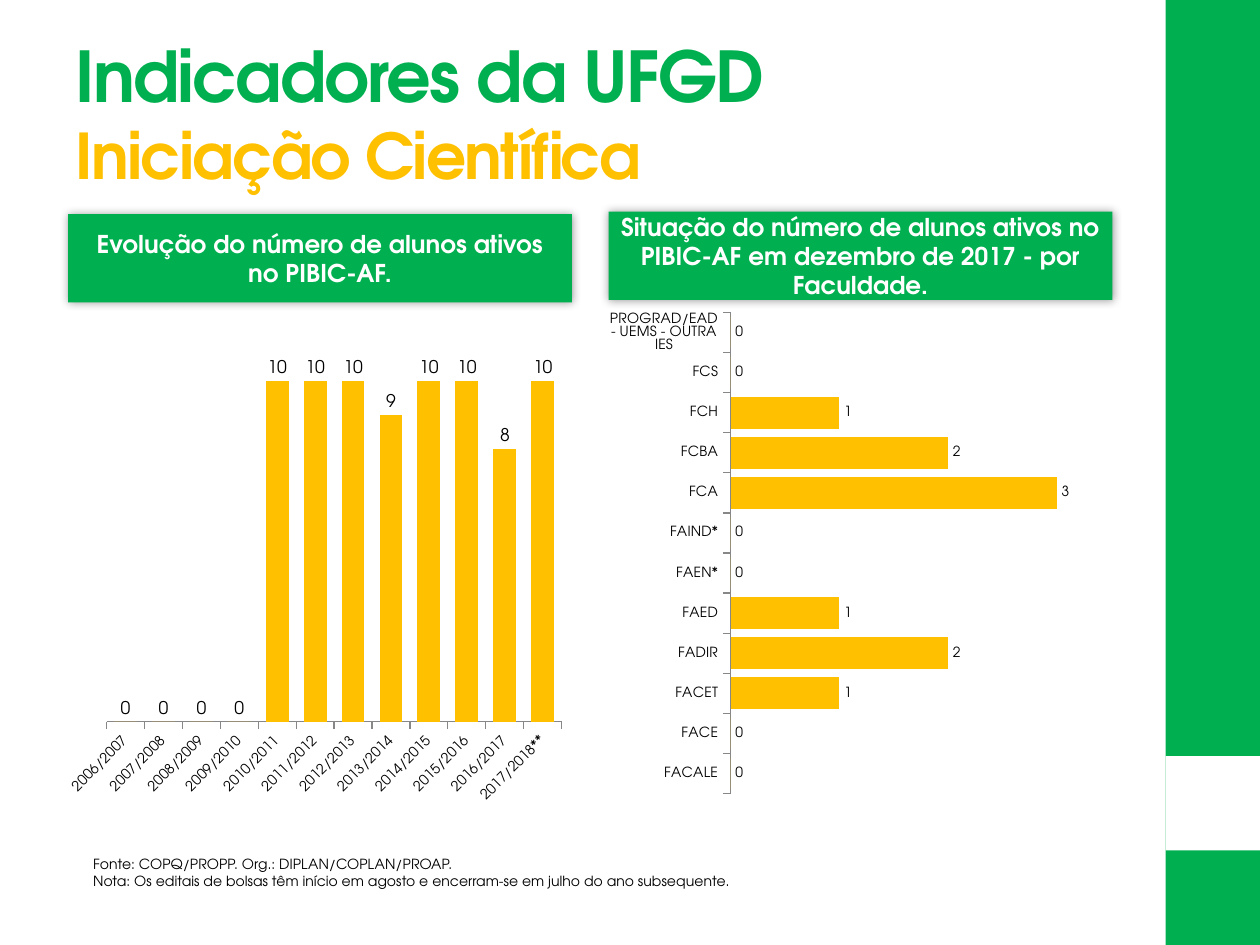
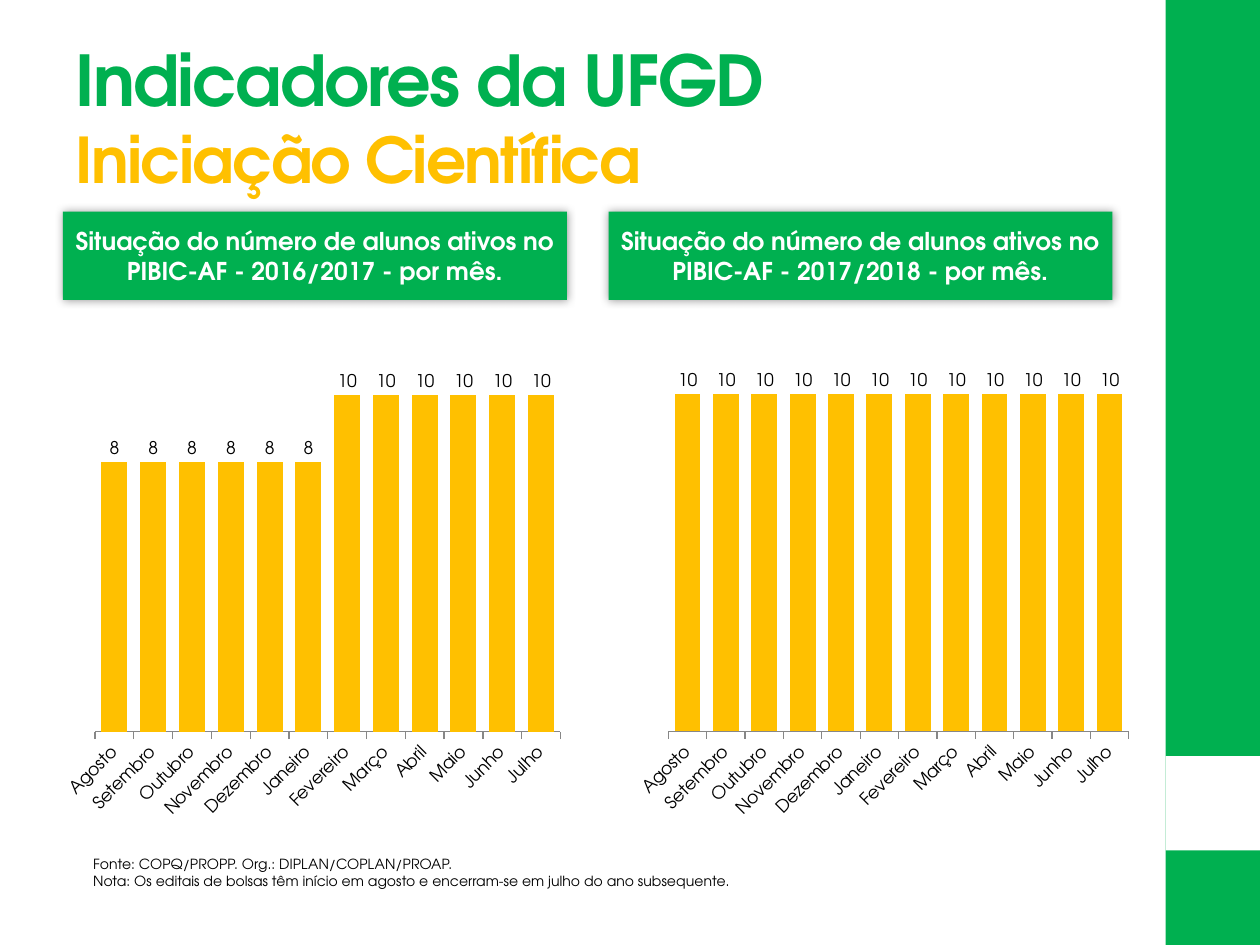
"""Build two slides of scientific initiation indicators."""
import dataclasses

import pptx
import pptx.chart.data
import pptx.dml.color
import pptx.enum.chart
import pptx.enum.shapes
import pptx.enum.text
import pptx.oxml
import pptx.oxml.ns
import pptx.util

GREEN = pptx.dml.color.RGBColor(0x00, 0xB0, 0x50)
AMBER = pptx.dml.color.RGBColor(0xFF, 0xC0, 0x00)
WHITE = pptx.dml.color.RGBColor(0xFF, 0xFF, 0xFF)
BLACK = pptx.dml.color.RGBColor(0x00, 0x00, 0x00)
GREY = pptx.dml.color.RGBColor(0x87, 0x87, 0x87)
FONT = "TeX Gyre Adventor"
COLUMNS, ROWS = 40, 30
SLIDE_WIDTH, SLIDE_HEIGHT = pptx.util.Inches(10), pptx.util.Inches(7.5)
COLUMN_CHART = pptx.enum.chart.XL_CHART_TYPE.COLUMN_CLUSTERED
BAR_CHART = pptx.enum.chart.XL_CHART_TYPE.BAR_CLUSTERED

YEARS = [f"{year}/{year + 1}" for year in range(2006, 2017)] + ["2017/2018**"]
FACULTIES = ["FACALE", "FACE", "FACET", "FADIR", "FAED", "FAEN*", "FAIND*", "FCA",
             "FCBA", "FCH", "FCS", "PROGRAD/EAD - UEMS - OUTRA IES"]
MONTHS = ["Agosto", "Setembro", "Outubro", "Novembro", "Dezembro", "Janeiro",
          "Fevereiro", "Março", "Abril", "Maio", "Junho", "Julho"]
SOURCE_NOTES = [
    "Fonte: COPQ/PROPP. Org.: DIPLAN/COPLAN/PROAP.",
    "Nota: Os editais de bolsas têm início em agosto e encerram-se em julho do ano subsequente.",
]


@dataclasses.dataclass
class Box:
    """A rectangle in grid columns and rows."""
    left: float
    top: float
    width: float
    height: float

    def inner(self, dx, dy, width, height):
        """Return a box placed from this one's top left corner."""
        return Box(self.left + dx, self.top + dy, width, height)

    def emu(self):
        """Return left, top, width and height in slide units."""
        across, down = SLIDE_WIDTH / COLUMNS, SLIDE_HEIGHT / ROWS
        return [round(length) for length in (self.left * across, self.top * down,
                                             self.width * across, self.height * down)]


@dataclasses.dataclass
class Panel:
    """A heading with its chart; plot gives shares of the chart's size."""
    box: Box
    heading: str
    chart_offset: tuple
    categories: list
    values: list
    plot: tuple
    gap: int
    maximum: float = 12
    kind: int = COLUMN_CHART
    axis_size: int = 8
    label_size: int = 10


def style_font(font, size, color, bold=False):
    """Apply the shared typeface with a size and colour."""
    font.name, font.size, font.bold = FONT, pptx.util.Pt(size), bold
    font.color.rgb = color


def add_run(paragraph, text, size, color, bold=False):
    """Append a styled run."""
    run = paragraph.add_run()
    run.text = text
    style_font(run.font, size, color, bold)
    return run


def add_block(slide, box, color):
    """Add a plain filled rectangle."""
    block = slide.shapes.add_shape(pptx.enum.shapes.MSO_SHAPE.RECTANGLE, *box.emu())
    block.fill.solid()
    block.fill.fore_color.rgb = color
    block.line.fill.background()
    block.shadow.inherit = False
    return block


def add_side_band(slide, box):
    """Draw the side band with its white square gap."""
    add_block(slide, box, GREEN)
    add_block(slide, box.inner(0, box.height * 0.8, box.width, box.width), WHITE)


def add_title(slide, box):
    """Write the two-line title."""
    frame = slide.shapes.add_textbox(*box.emu()).text_frame
    frame.word_wrap = True
    frame.vertical_anchor = pptx.enum.text.MSO_ANCHOR.MIDDLE
    paragraph = frame.paragraphs[0]
    first = add_run(paragraph, "Indicadores da UFGD", 40, GREEN, True)
    paragraph.add_line_break()
    second = add_run(paragraph, "Iniciação Científica", 36, AMBER, True)
    for run in (first, second):
        run.font._element.set("spc", "-100")


def add_source(slide, box):
    """Write the source and note lines."""
    frame = slide.shapes.add_textbox(*box.emu()).text_frame
    frame.word_wrap = True
    for index, note in enumerate(SOURCE_NOTES):
        paragraph = frame.add_paragraph() if index else frame.paragraphs[0]
        add_run(paragraph, note, 8, BLACK)


def add_heading(slide, box, text):
    """Draw a green heading with a soft glow of shadow."""
    heading = add_block(slide, box, GREEN)
    effects = heading._element.spPr.find(pptx.oxml.ns.qn("a:effectLst"))
    effects.append(pptx.oxml.parse_xml(
        f'<a:outerShdw {pptx.oxml.ns.nsdecls("a")} blurRad="{pptx.util.Pt(5)}" dist="0" dir="0">'
        '<a:srgbClr val="000000"><a:alpha val="40000"/></a:srgbClr></a:outerShdw>'))
    frame = heading.text_frame
    frame.word_wrap = True
    frame.vertical_anchor = pptx.enum.text.MSO_ANCHOR.MIDDLE
    paragraph = frame.paragraphs[0]
    paragraph.alignment = pptx.enum.text.PP_ALIGN.CENTER
    paragraph.space_before = pptx.util.Pt(2.8)
    add_run(paragraph, text, 14, WHITE, True)


def set_plot_layout(chart, shares):
    """Fix the inner plot area as shares of the chart."""
    sizes = "".join(f'<c:{key} val="{share}"/>' for key, share in zip("xywh", shares))
    plot_area = chart._chartSpace.chart.plotArea
    for layout in plot_area.findall(pptx.oxml.ns.qn("c:layout")):
        plot_area.remove(layout)
    plot_area.insert(0, pptx.oxml.parse_xml(
        f'<c:layout {pptx.oxml.ns.nsdecls("c")}><c:manualLayout><c:layoutTarget val="inner"/>'
        f'<c:xMode val="edge"/><c:yMode val="edge"/>{sizes}</c:manualLayout></c:layout>'))


def add_panel_chart(slide, box, panel):
    """Add the panel's chart with value labels and no value axis."""
    data = pptx.chart.data.CategoryChartData()
    data.categories = panel.categories
    data.add_series("Series 1", panel.values)
    chart = slide.shapes.add_chart(panel.kind, *box.emu(), data).chart
    chart.has_legend = chart.has_title = False
    style_font(chart.font, 10, BLACK)
    set_plot_layout(chart, panel.plot)

    value_axis = chart.value_axis
    value_axis.visible = value_axis.has_major_gridlines = False
    value_axis.minimum_scale, value_axis.maximum_scale = 0, panel.maximum
    category_axis = chart.category_axis
    category_axis.major_tick_mark = pptx.enum.chart.XL_TICK_MARK.OUTSIDE
    category_axis.format.line.color.rgb = GREY
    category_axis.format.line.width = pptx.util.Pt(0.75)
    style_font(category_axis.tick_labels.font, panel.axis_size, BLACK)
    if panel.kind == COLUMN_CHART:
        category_axis._element.txPr.bodyPr.set("rot", str(-45 * 60000))

    plot = chart.plots[0]
    plot.gap_width, plot.vary_by_categories = panel.gap, False
    plot.has_data_labels = True
    labels = plot.data_labels
    labels.show_value = True
    labels.position = pptx.enum.chart.XL_LABEL_POSITION.OUTSIDE_END
    style_font(labels.font, panel.label_size, BLACK)
    bars = plot.series[0].format.fill
    bars.solid()
    bars.fore_color.rgb = AMBER


def add_panel(slide, panel):
    """Place a heading and the chart under it in the panel's box."""
    box = panel.box
    add_heading(slide, box.inner(0, 0, box.width, 2.8), panel.heading)
    dx, dy = panel.chart_offset
    add_panel_chart(slide, box.inner(dx, dy, 16.24, box.height - dy), panel)


def add_indicator_slide(deck, title_top, panels):
    """Add one slide with the shared frame and its panels."""
    slide = deck.slides.add_slide(deck.slide_layouts[6])
    add_side_band(slide, Box(37, 0, 3, ROWS))
    add_title(slide, Box(2, title_top, 33.32, 5))
    for panel in panels:
        add_panel(slide, panel)
    add_source(slide, Box(2.56, 26.96, 33.52, 1.72))


def main():
    """Build and save the deck."""
    deck = pptx.Presentation()
    deck.slide_width, deck.slide_height = SLIDE_WIDTH, SLIDE_HEIGHT
    right_left, top = 19.32, 6.72
    add_indicator_slide(deck, 1.08, [
        Panel(Box(2.16, 6.8, 16, 19.04), "Evolução do número de alunos ativos no PIBIC-AF.",
              (-0.24, 2.8), YEARS, [0, 0, 0, 0, 10, 10, 10, 9, 10, 10, 8, 10],
              (0.09, 0.02, 0.89, 0.8), 66),
        Panel(Box(right_left, top, 16, 18.8),
              "Situação do número de alunos ativos no PIBIC-AF em dezembro de 2017 - por Faculdade.",
              (0.04, 2.88), FACULTIES, [0, 0, 1, 2, 1, 0, 0, 3, 2, 1, 0, 0],
              (0.23, 0.02, 0.75, 0.96), 25, maximum=3.5, kind=BAR_CHART, label_size=8),
    ])
    monthly_heading = "Situação do número de alunos ativos no PIBIC-AF - {} - por mês."
    add_indicator_slide(deck, 1.2, [
        Panel(Box(2, top, 16, 19.6), monthly_heading.format("2016/2017"), (-0.12, 3.36),
              MONTHS, [8] * 6 + [10] * 6, (0.07, 0.02, 0.91, 0.79), 49, axis_size=10),
        Panel(Box(right_left, top, 16, 19.6), monthly_heading.format("2017/2018"), (0.6, 3.32),
              MONTHS, [10] * 12, (0.08, 0.02, 0.9, 0.79), 49, axis_size=10),
    ])
    deck.save("out.pptx")


if __name__ == "__main__":
    main()
